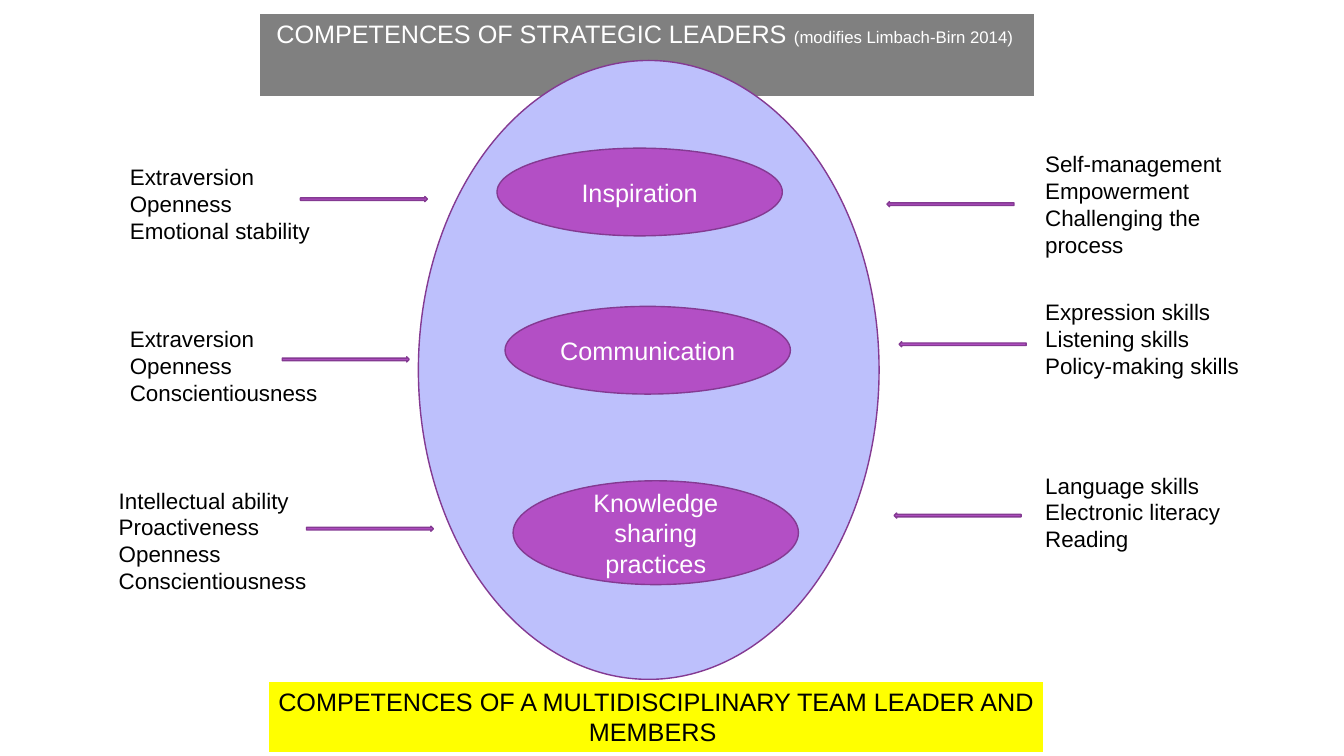
from pptx import Presentation
from pptx.dml.color import RGBColor
from pptx.enum.shapes import MSO_SHAPE
from pptx.enum.text import MSO_ANCHOR, MSO_AUTO_SIZE, PP_ALIGN
from pptx.util import Inches, Pt

COLOURS = {
    "white": "FFFFFF", "black": "000000", "grey": "808080", "yellow": "FFFF00",
    "lavender": "BDC0FC", "purple": "B34FC5", "outline": "843A92",
}
FONT = "Arial"
SLIDE_WIDTH, SLIDE_HEIGHT = Inches(13.333), Inches(7.5)
LIST_WIDTH, LIST_PADDING, LIST_LINE = 15.98, 1.23, 3.63
ARROW_WIDTH, ARROW_HEIGHT = 9.45, 0.67
BANNER_WIDTH = 57.75

COMPETENCES = [
    ("Inspiration", 19.6, 11.6),
    ("Communication", 40.53, 11.6),
    ("Knowledge sharing practices", 63.6, 13.73),
]
TRAITS = [
    (8.93, 20.93, 3, ["Extraversion", "Openness", "Emotional stability"]),
    (8.93, 42.4, 3, ["Extraversion", "Openness", "Conscientiousness"]),
    (8.1, 63.73, 4, ["Intellectual ability", "Proactiveness", "Openness",
                     "Conscientiousness"]),
]
SKILLS = [
    (77.03, 19.2, 4, ["Self-management", "Empowerment", "Challenging the process"]),
    (77.03, 38.8, 3, ["Expression skills", "Listening skills", "Policy-making skills"]),
    (77.03, 61.73, 3, ["Language skills", "Electronic literacy", "Reading"]),
]
TRAIT_ARROWS = [(22.35, 26), (21, 47.2), (22.8, 69.6)]
SKILL_ARROWS = [(66, 26.67), (66.9, 45.2), (66.53, 67.87)]


def colour(name):
    return RGBColor.from_string(COLOURS[name])


def percent(left, top, width, height):
    return (int(SLIDE_WIDTH * left / 100), int(SLIDE_HEIGHT * top / 100),
            int(SLIDE_WIDTH * width / 100), int(SLIDE_HEIGHT * height / 100))


def paint(shape, fill, line, weight):
    shape.fill.solid()
    shape.fill.fore_color.rgb = colour(fill)
    shape.line.color.rgb = colour(line)
    shape.line.width = Pt(weight)


def add_span(para, text, size, ink):
    span = para.add_run()
    span.text = text
    span.font.name = FONT
    span.font.size = Pt(size)
    span.font.color.rgb = colour(ink)


def add_figure(page, preset, area, fill):
    figure = page.shapes.add_shape(preset, *percent(*area))
    figure.shadow.inherit = False
    paint(figure, fill, "outline", 1)
    return figure


def add_competence(page, text, left, top, height):
    oval = add_figure(page, MSO_SHAPE.OVAL, (left, top, 21.23, height), "purple")
    oval.text_frame.vertical_anchor = MSO_ANCHOR.MIDDLE
    para = oval.text_frame.paragraphs[0]
    para.alignment = PP_ALIGN.CENTER
    add_span(para, text, 18, "white")


def add_arrow(page, left, top, rotation):
    area = (left, top, ARROW_WIDTH, ARROW_HEIGHT)
    arrow = add_figure(page, MSO_SHAPE.LEFT_ARROW, area, "purple")
    arrow.rotation = rotation


def add_list(page, left, top, lines, items):
    height = LIST_PADDING + LIST_LINE * lines
    box = page.shapes.add_textbox(*percent(left, top, LIST_WIDTH, height))
    frame = box.text_frame
    frame.word_wrap = True
    frame.auto_size = MSO_AUTO_SIZE.SHAPE_TO_FIT_TEXT
    for index, item in enumerate(items):
        para = frame.add_paragraph() if index else frame.paragraphs[0]
        add_span(para, item, 16, "black")


def format_banner(banner, area, fill, ink, spans):
    banner.left, banner.top, banner.width, banner.height = percent(*area)
    paint(banner, fill, "white", 1.5)
    frame = banner.text_frame
    frame.word_wrap = True
    frame.auto_size = MSO_AUTO_SIZE.SHAPE_TO_FIT_TEXT
    frame.vertical_anchor = MSO_ANCHOR.TOP
    para = frame.paragraphs[0]
    para.alignment = PP_ALIGN.CENTER
    for text, size in spans:
        add_span(para, text, size, ink)


def main():
    deck = Presentation()
    deck.slide_width, deck.slide_height = SLIDE_WIDTH, SLIDE_HEIGHT
    page = deck.slides.add_slide(deck.slide_layouts[5])

    format_banner(page.shapes.title, (19.28, 1.73, BANNER_WIDTH, 5.33), "grey", "white",
                  [("COMPETENCES OF STRATEGIC LEADERS ", 18),
                   ("(modifies Limbach-Birn 2014) ", 12)])
    add_figure(page, MSO_SHAPE.OVAL, (31.13, 8, 34.28, 81.87), "lavender")
    for index, (text, top, height) in enumerate(COMPETENCES):
        add_competence(page, text, 36.98 + 0.6 * index, top, height)
    for left, top in SKILL_ARROWS:
        add_arrow(page, left, top, 0)
    for left, top in TRAIT_ARROWS:
        add_arrow(page, left, top, 180)
    for entry in TRAITS + SKILLS:
        add_list(page, *entry)

    area = (19.95, 90.13, BANNER_WIDTH, 9.47)
    footer = page.shapes.add_textbox(*percent(*area))
    format_banner(footer, area, "yellow", "black",
                  [("COMPETENCES OF A MULTIDISCIPLINARY TEAM LEADER AND MEMBERS ", 18)])
    deck.save("out.pptx")


if __name__ == "__main__":
    main()
